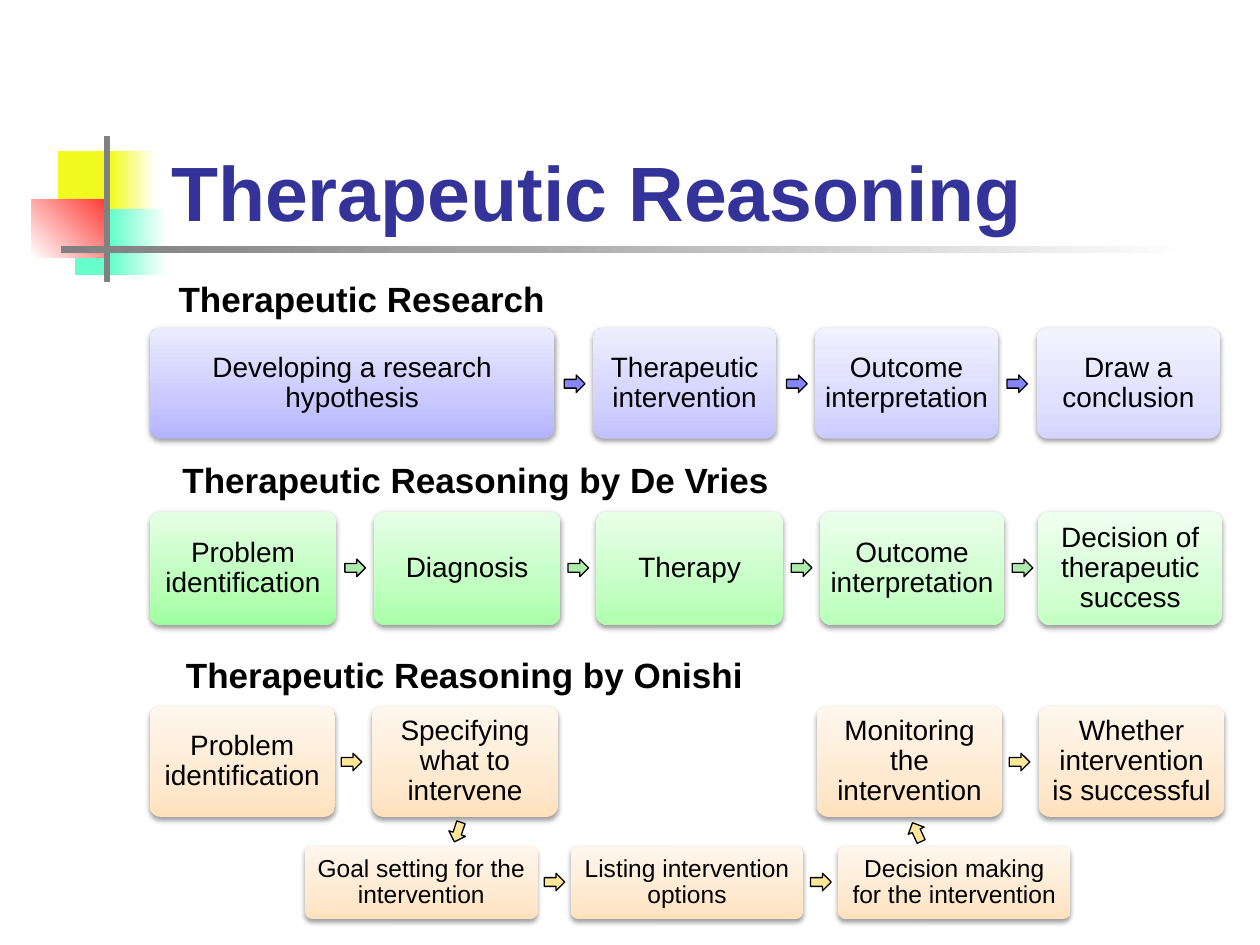
from pptx import Presentation
from pptx.dml.color import RGBColor
from pptx.enum.shapes import MSO_SHAPE as Shape
from pptx.enum.text import MSO_ANCHOR as Anchor, PP_ALIGN as Align
from pptx.oxml import parse_xml
from pptx.oxml.ns import nsdecls
from pptx.util import Pt

BLACK = RGBColor(0x00, 0x00, 0x00)
WHITE = RGBColor(0xFF, 0xFF, 0xFF)
NAVY = RGBColor(0x33, 0x33, 0x99)
GRAY = RGBColor(0x80, 0x80, 0x80)
LIGHT_GRAY = RGBColor(0xA6, 0xA6, 0xA6)
YELLOW = RGBColor(0xF1, 0xFB, 0x1F)
MINT = RGBColor(0x66, 0xFF, 0xCC)
RED = RGBColor(0xFE, 0x39, 0x34)
BLUE_ARROW = RGBColor(0x85, 0x85, 0xFF)
GREEN_ARROW = RGBColor(0xAD, 0xEB, 0xAD)
GOLD_ARROW = RGBColor(0xFF, 0xE6, 0x99)

# Bottom, middle and top colour of each box; the two tints fade from left to right
BLUES = [[RGBColor(tint, tint, 0xFF) for tint in tints] for tints in (
    (0xB3, 0xC9, 0xEB), (0xC1, 0xD3, 0xEE), (0xCB, 0xDA, 0xF1), (0xD5, 0xE1, 0xF3))]
GREENS = [[RGBColor(tint, 0xFF, tint) for tint in tints] for tints in (
    (0x9F, 0xBB, 0xE5), (0xA8, 0xC1, 0xE7), (0xAF, 0xC6, 0xE9),
    (0xB9, 0xCD, 0xEC), (0xC5, 0xD5, 0xEF))]
ORANGE = [RGBColor(0xFF, 0xE2, 0xBD), RGBColor(0xFF, 0xEA, 0xD1), RGBColor(0xFF, 0xF7, 0xEE)]

deck = Presentation()
deck.slide_width, deck.slide_height = Pt(720), Pt(540)
page = deck.slides.add_slide(deck.slide_layouts[6])


def add_shape(kind, left, top, width, height, fill=None, stops=(), angle=0, line=None):
    """Add a shape with a plain fill, or a gradient of (percent, colour) stops."""
    shape = page.shapes.add_shape(kind, Pt(left), Pt(top), Pt(width), Pt(height))
    shape.shadow.inherit = False
    if stops:
        marks = "".join(f'<a:gs pos="{percent * 1000}"><a:srgbClr val="{color}"/></a:gs>'
                        for percent, color in stops)
        shape._element.spPr.insert(2, parse_xml(
            f'<a:gradFill {nsdecls("a")} rotWithShape="1"><a:gsLst>{marks}</a:gsLst>'
            f'<a:lin ang="{angle * 60000}" scaled="0"/></a:gradFill>'))
    else:
        shape.fill.solid()
        shape.fill.fore_color.rgb = fill
    if line is None:
        shape.line.fill.background()
    else:
        shape.line.color.rgb = line
        shape.line.width = Pt(0.75)
    return shape


def add_text(shape, text, size, color=BLACK, bold=False, align=Align.LEFT,
             anchor=Anchor.TOP, inset=(7.2, 3.6), spacing=None):
    frame = shape.text_frame
    frame.word_wrap = True
    frame.vertical_anchor = anchor
    frame.margin_left = frame.margin_right = Pt(inset[0])
    frame.margin_top = frame.margin_bottom = Pt(inset[1])
    para = frame.paragraphs[0]
    para.alignment = align
    para.line_spacing = spacing
    span = para.add_run()
    span.text = text
    span.font.name = "Arial"
    span.font.size = Pt(size)
    span.font.bold = bold
    span.font.color.rgb = color


# Coloured blocks and crossed bars beside the title
add_shape(Shape.RECTANGLE, 33.1, 86.4, 34.6, 37.4, fill=YELLOW)
add_shape(Shape.RECTANGLE, 63.2, 86.4, 25.9, 37.4, stops=[(0, YELLOW), (100, WHITE)])
add_shape(Shape.RECTANGLE, 42.8, 119.7, 52.6, 37.4,
          stops=[(0, MINT), (39, MINT), (100, WHITE)])
add_shape(Shape.RECTANGLE, 17.9, 113.9, 43.9, 33.4,
          stops=[(0, WHITE), (100, RED)], angle=315)
add_shape(Shape.RECTANGLE, 60, 78, 2.4, 82.8, fill=GRAY, line=GRAY)
add_shape(Shape.RECTANGLE, 34.8, 140.4, 648, 4.3,
          stops=[(0, GRAY), (39, LIGHT_GRAY), (100, WHITE)])

# Title and headings
for text, left, top, width, height, style in (
    ("Therapeutic Reasoning", 90.7, 49, 613.4, 90,
     dict(size=44, color=NAVY, anchor=Anchor.BOTTOM)),
    ("Therapeutic Research", 95, 154.8, 476, 31.5, dict(size=20)),
    ("Therapeutic Reasoning by De Vries", 97.2, 258.5, 476, 31.5, dict(size=20)),
    ("Therapeutic Reasoning by Onishi", 99.2, 370, 476, 31.5, dict(size=20)),
):
    box = page.shapes.add_textbox(Pt(left), Pt(top), Pt(width), Pt(height))
    add_text(box, text, bold=True, **style)

# Rows of steps: top, height, text size, inset, palette, then (label, left, width)
rows = (
    (187.2, 63.5, 16, 5, BLUES, (
        ("Developing a research hypothesis", 85.5, 231.5),
        ("Therapeutic intervention", 339, 104.6),
        ("Outcome interpretation", 465.8, 104.6),
        ("Draw a conclusion", 592.5, 104.6))),
    (292.3, 65, 16, 3.6, GREENS, (
        ("Problem identification", 85.5, 106.8),
        ("Diagnosis", 213.6, 106.8),
        ("Therapy", 340.7, 106.8),
        ("Outcome interpretation", 468.6, 105.2),
        ("Decision of therapeutic success", 593.3, 105.2))),
    (403.3, 63.5, 16, 5, [ORANGE] * 4, (
        ("Problem identification", 85.5, 105.9),
        ("Specifying what to intervene", 212.8, 105.9),
        ("Monitoring the intervention", 466.8, 105.9),
        ("Whether intervention is successful", 593.7, 105.9))),
    (483.4, 41.8, 14, 5, [ORANGE] * 3, (
        ("Goal setting for the intervention", 174.4, 132.8),
        ("Listing intervention options", 326.2, 132.8),
        ("Decision making for the intervention", 478.9, 132.8))),
)
for top, height, size, inset, palette, steps in rows:
    for (label, left, width), colors in zip(steps, palette):
        box = add_shape(Shape.ROUNDED_RECTANGLE, left, top, width, height,
                        stops=list(zip((0, 35, 100), colors)), angle=270)
        box.adjustments[0] = 0.1
        effects = box._element.spPr.find("{*}effectLst")
        effects.append(parse_xml(
            f'<a:outerShdw {nsdecls("a")} blurRad="{Pt(3.1)}" dist="{Pt(1.6)}" dir="5400000" '
            f'rotWithShape="0"><a:srgbClr val="{BLACK}"><a:alpha val="38000"/></a:srgbClr>'
            '</a:outerShdw>'))
        side = 0 if label == "Outcome interpretation" else inset
        add_text(box, label, size, align=Align.CENTER, anchor=Anchor.MIDDLE,
                 inset=(side, inset), spacing=0.9)

# Arrows between steps: colour, top, rotation, left edges
for color, top, turn, lefts in (
    (BLUE_ARROW, 214.3, 0, (322.5, 449.5, 575.4)),
    (GREEN_ARROW, 319.5, 0, (197.1, 324.6, 452.2, 578.4)),
    (GOLD_ARROW, 430.4, 0, (195, 576.7)),
    (GOLD_ARROW, 499, 0, (311, 463.2)),
    (GOLD_ARROW, 470.5, 108.7, (255.6,)),
    (GOLD_ARROW, 470.5, 245.3, (518,)),
):
    for left in lefts:
        arrow = add_shape(Shape.RIGHT_ARROW, left, top, 11.8, 10, fill=color, line=BLACK)
        arrow.rotation = turn

deck.save("out.pptx")
